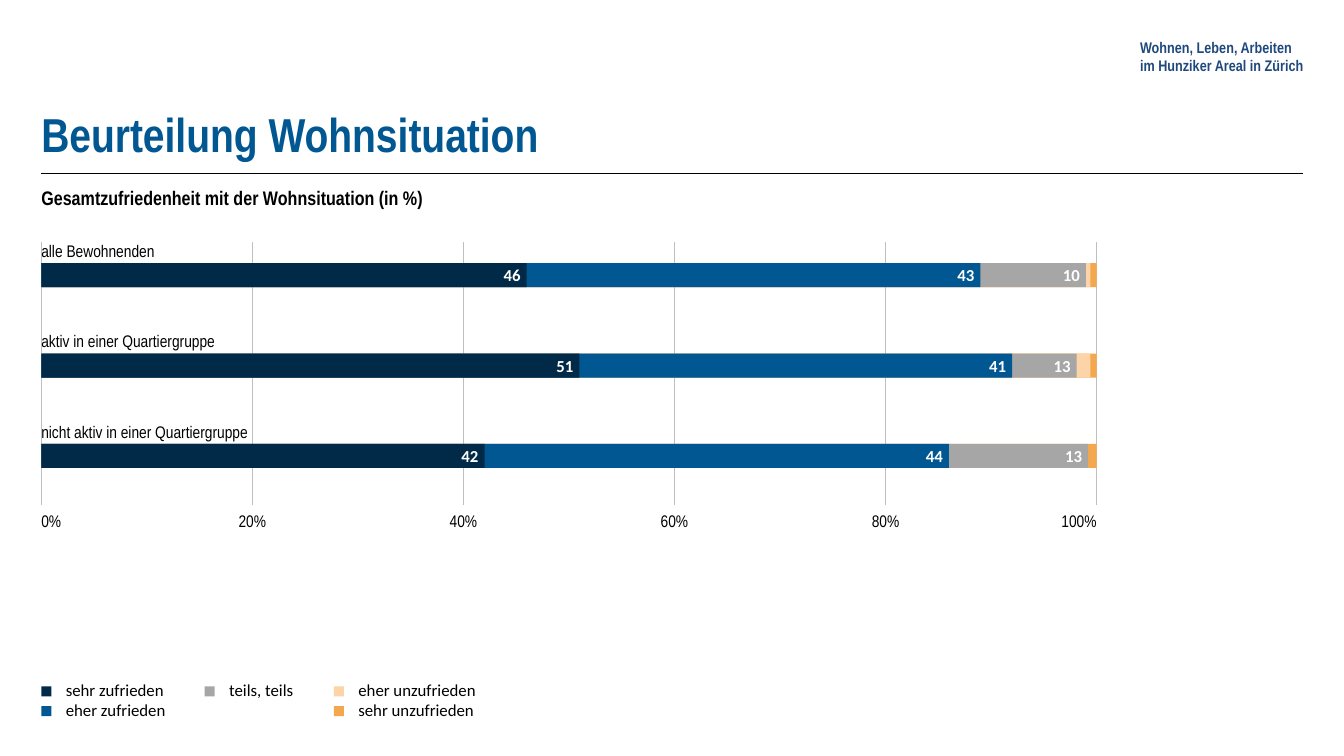
from dataclasses import dataclass

from lxml import etree
from pptx import Presentation
from pptx.dml.color import RGBColor
from pptx.enum.shapes import MSO_CONNECTOR, MSO_SHAPE
from pptx.enum.text import MSO_ANCHOR as Anchor, PP_ALIGN as Align
from pptx.oxml.ns import qn
from pptx.util import Pt


@dataclass(frozen=True)
class Theme:
    heading_font: str = "Arial Narrow"
    body_font: str = "Calibri"
    title_size: float = 34
    subtitle_size: float = 14
    body_size: float = 12
    header_size: float = 11
    black: str = "000000"
    white: str = "FFFFFF"
    header: str = "1F497D"
    grid: str = "BFBFBF"
    very_satisfied: str = "002A48"
    satisfied: str = "005791"
    neutral: str = "A6A6A6"
    dissatisfied: str = "FCD4A8"
    very_dissatisfied: str = "F5A74D"


theme = Theme()
deck = Presentation()
deck.slide_width, deck.slide_height = Pt(960), Pt(540)
page = deck.slides.add_slide(deck.slide_layouts[6])

LEFT, RIGHT = 29.5, 931
CHART_WIDTH = 753.8
GRID_TOP, GRID_BOTTOM = 172.8, 360.7
TICK_WIDTH = 34
FIRST_BAR, BAR_STEP, BAR_HEIGHT = 188, 64.5, 17.2
LEGEND_TOP, LEGEND_STEP, SWATCH = 485.3, 14.1, 7.2


def add_text(x, y, width, height, lines, size=theme.body_size, font=theme.heading_font,
             color=theme.black, bold=False, align=Align.LEFT, anchor=Anchor.TOP):
    frame = page.shapes.add_textbox(Pt(x), Pt(y), Pt(width), Pt(height)).text_frame
    frame.word_wrap = True
    frame.margin_left = frame.margin_top = frame.margin_right = frame.margin_bottom = 0
    frame.vertical_anchor = anchor
    frame.text = lines
    for para in frame.paragraphs:
        para.alignment = align
        para.font.name, para.font.size, para.font.bold = font, Pt(size), bold
        para.font.color.rgb = RGBColor.from_string(color)


def add_block(x, y, width, height, color):
    block = page.shapes.add_shape(MSO_SHAPE.RECTANGLE, Pt(x), Pt(y), Pt(width), Pt(height))
    block.shadow.inherit = False
    block.fill.solid()
    block.fill.fore_color.rgb = RGBColor.from_string(color)
    block.line.fill.background()
    return block


# Headings
add_text(814.3, 25.2, 134, 30.2, "Wohnen, Leben, Arbeiten\vim Hunziker Areal in Zürich",
         theme.header_size, color=theme.header, bold=True, anchor=Anchor.MIDDLE)
add_text(LEFT, 26, RIGHT - LEFT, 90, "Beurteilung Wohnsituation", theme.title_size,
         color=theme.satisfied, bold=True, anchor=Anchor.BOTTOM)
add_text(LEFT, 132.5, RIGHT - LEFT, 25, "Gesamtzufriedenheit mit der Wohnsituation (in %)",
         theme.subtitle_size, bold=True)

# Title rule and gridlines
rules = [(LEFT, 124, RIGHT, 124, theme.black, 1)]
for percent in range(0, 101, 20):
    x = LEFT + CHART_WIDTH * percent / 100
    rules.append((x, GRID_TOP, x, GRID_BOTTOM, theme.grid, 0.75))
    shift, align = {0: (0, Align.LEFT), 100: (1, Align.RIGHT)}.get(percent, (0.5, Align.CENTER))
    add_text(x - shift * TICK_WIDTH, 365, TICK_WIDTH, 17, f"{percent}%", align=align)

for x1, y1, x2, y2, color, weight in rules:
    rule = page.shapes.add_connector(MSO_CONNECTOR.STRAIGHT, Pt(x1), Pt(y1), Pt(x2), Pt(y2))
    rule.line.color.rgb = RGBColor.from_string(color)
    rule.line.width = Pt(weight)
    etree.SubElement(rule._element.spPr, qn("a:effectLst"))

# Bars: each runs from the left edge to its cumulative percentage, longest at the back
groups = [
    ("alle Bewohnenden",
     [(100, "", theme.very_dissatisfied), (99.4, "", theme.dissatisfied),
      (99, "10", theme.neutral), (89, "43", theme.satisfied), (46, "46", theme.very_satisfied)]),
    ("aktiv in einer Quartiergruppe",
     [(100, "", theme.very_dissatisfied), (99.4, "", theme.dissatisfied),
      (98.1, "13", theme.neutral), (92, "41", theme.satisfied), (51, "51", theme.very_satisfied)]),
    ("nicht aktiv in einer Quartiergruppe",
     [(100, "", theme.very_dissatisfied),
      (99.2, "13", theme.neutral), (86, "44", theme.satisfied), (42, "42", theme.very_satisfied)]),
]
for row, (group, bars) in enumerate(groups):
    top = FIRST_BAR + row * BAR_STEP
    add_text(LEFT, top - 16, CHART_WIDTH, 19, group)
    for end, value, color in bars:
        bar = add_block(LEFT, top, CHART_WIDTH * end / 100, BAR_HEIGHT, color)
        if value:
            frame = bar.text_frame
            frame.margin_right = Pt(4.3)
            frame.vertical_anchor = Anchor.MIDDLE
            frame.text = value
            para = frame.paragraphs[0]
            para.alignment = Align.RIGHT
            para.font.name, para.font.size = theme.body_font, Pt(theme.body_size)
            para.font.bold = True
            para.font.color.rgb = RGBColor.from_string(theme.white)

# Legend
legend = [
    (LEFT, 82, [("sehr zufrieden", theme.very_satisfied), ("eher zufrieden", theme.satisfied)]),
    (146.2, 49, [("teils, teils", theme.neutral)]),
    (238.5, 164, [("eher unzufrieden", theme.dissatisfied),
                  ("sehr unzufrieden", theme.very_dissatisfied)]),
]
for x, width, entries in legend:
    add_text(x + 17.5, LEGEND_TOP, width, 16 * len(entries),
             "\n".join(name for name, color in entries), font=theme.body_font)
    for row, (name, color) in enumerate(entries):
        add_block(x, LEGEND_TOP + 5 + row * LEGEND_STEP, SWATCH, SWATCH, color)

deck.save("out.pptx")
